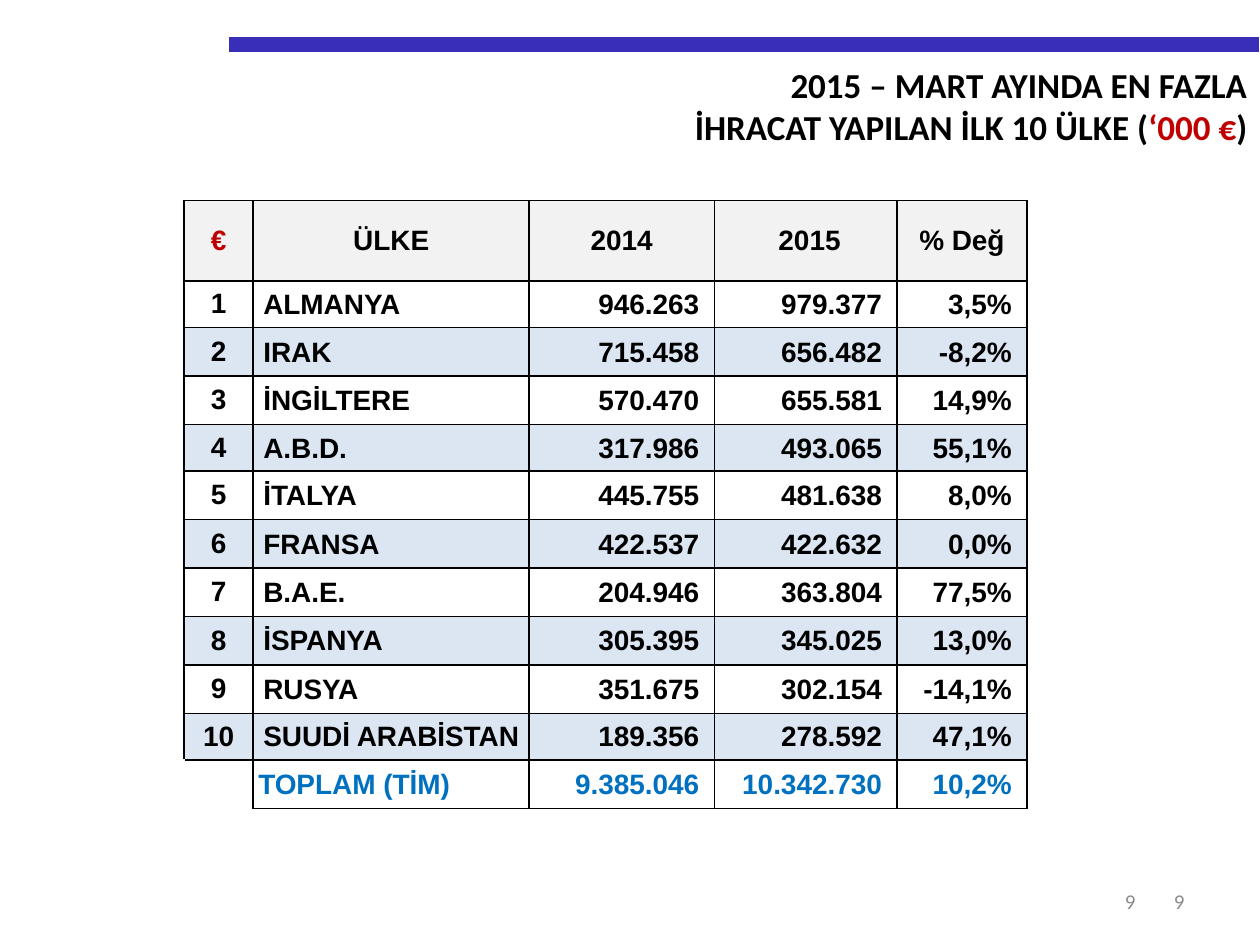
from dataclasses import dataclass

from lxml import etree
from pptx import Presentation
from pptx.dml.color import RGBColor
from pptx.enum.shapes import MSO_CONNECTOR
from pptx.enum.text import MSO_ANCHOR, MSO_AUTO_SIZE, PP_ALIGN
from pptx.oxml.ns import qn
from pptx.util import Inches, Pt

STRAIGHT = MSO_CONNECTOR.STRAIGHT
TOP, MIDDLE = MSO_ANCHOR.TOP, MSO_ANCHOR.MIDDLE
LEFT, CENTER, RIGHT = PP_ALIGN.LEFT, PP_ALIGN.CENTER, PP_ALIGN.RIGHT
NO_FIT = MSO_AUTO_SIZE.NONE

HEADERS = ["€", "ÜLKE", "2014", " 2015", "% Değ"]
COUNTRIES = [
    ("ALMANYA", "946.263", "979.377", "3,5%"),
    ("IRAK", "715.458", "656.482", "-8,2%"),
    ("İNGİLTERE", "570.470", "655.581", "14,9%"),
    ("A.B.D.", "317.986", "493.065", "55,1%"),
    ("İTALYA", "445.755", "481.638", "8,0%"),
    ("FRANSA", "422.537", "422.632", "0,0%"),
    ("B.A.E.", "204.946", "363.804", "77,5%"),
    ("İSPANYA", "305.395", "345.025", "13,0%"),
    ("RUSYA", "351.675", "302.154", "-14,1%"),
    ("SUUDİ ARABİSTAN", "189.356", "278.592", "47,1%"),
]
TOTAL = ["", "TOPLAM (TİM)", "9.385.046", "10.342.730", "10,2%"]
COLUMN_WIDTHS = [0.55, 2.19, 1.47, 1.45, 1.03]
TABLE_HEIGHT = 4.83
HEADER_HEIGHT = 0.64
SHORT_HEIGHT = 0.37
SHORT_ROWS = (1, 4, 10)


@dataclass
class Theme:
    """Colours, fonts and type sizes of the deck."""
    ink: str = "000000"
    accent: str = "C00000"
    total: str = "0070C0"
    bar: str = "382EB8"
    muted: str = "8C8C8C"
    header_fill: str = "F2F2F2"
    band_fill: str = "DCE6F2"
    heading_font: str = "Calibri"
    table_font: str = "Arial"
    title_size: int = 20
    table_size: int = 16
    number_size: int = 12


class SlideBuilder:
    """Draws styled elements on the current slide."""

    def __init__(self, slide, theme):
        self.slide = slide
        self.theme = theme

    def run(self, para, text, font, size, color, bold=True):
        span = para.add_run()
        span.text = text
        span.font.name = font
        span.font.size = Pt(size)
        span.font.bold = bold
        span.font.color.rgb = RGBColor.from_string(color)

    def title(self, lines, left, top, width, height):
        box = self.slide.shapes.title
        box.left, box.top = Inches(left), Inches(top)
        box.width, box.height = Inches(width), Inches(height)
        frame = box.text_frame
        frame.auto_size = NO_FIT
        frame.vertical_anchor = TOP
        for index, line in enumerate(lines):
            para = frame.add_paragraph() if index else frame.paragraphs[0]
            para.alignment = RIGHT
            for text, color in line:
                self.run(para, text, self.theme.heading_font, self.theme.title_size, color)

    def bar(self, left, right, top, weight):
        line = self.slide.shapes.add_connector(
            STRAIGHT, Inches(left), Inches(top), Inches(right), Inches(top))
        line.line.color.rgb = RGBColor.from_string(self.theme.bar)
        line.line.width = Pt(weight)
        etree.SubElement(line._element.spPr, qn("a:effectLst"))

    def page_number(self, text, left, top, width, height):
        box = self.slide.shapes.add_textbox(
            Inches(left), Inches(top), Inches(width), Inches(height))
        frame = box.text_frame
        frame.word_wrap = True
        frame.vertical_anchor = MIDDLE
        para = frame.paragraphs[0]
        para.alignment = RIGHT
        self.run(para, text, self.theme.heading_font, self.theme.number_size,
                 self.theme.muted, bold=False)

    def borders(self, cell, sides):
        properties = cell._tc.get_or_add_tcPr()
        for index, side in enumerate(sides):
            line = etree.Element(qn(f"a:ln{side}"), w=str(Pt(1)))
            fill = etree.SubElement(line, qn("a:solidFill"))
            etree.SubElement(fill, qn("a:srgbClr"), val=self.theme.ink)
            properties.insert(index, line)

    def cell(self, cell, text, color, fill, align, margins, sides="LRTB"):
        if fill:
            cell.fill.solid()
            cell.fill.fore_color.rgb = RGBColor.from_string(fill)
        else:
            cell.fill.background()
        self.borders(cell, sides)
        cell.vertical_anchor = MIDDLE
        (cell.margin_left, cell.margin_top,
         cell.margin_right, cell.margin_bottom) = [Inches(margin) for margin in margins]
        para = cell.text_frame.paragraphs[0]
        para.alignment = align
        para.font.size = Pt(self.theme.table_size)
        if text:
            self.run(para, text, self.theme.table_font, self.theme.table_size, color)

    def table(self, rows, left, top):
        theme = self.theme
        table = self.slide.shapes.add_table(
            len(rows), len(COLUMN_WIDTHS), Inches(left), Inches(top),
            Inches(sum(COLUMN_WIDTHS)), Inches(TABLE_HEIGHT)).table
        table.first_row = table.horz_banding = False
        for column, width in zip(table.columns, COLUMN_WIDTHS):
            column.width = Inches(width)
        regular_count = len(rows) - 1 - len(SHORT_ROWS)
        regular = (TABLE_HEIGHT - HEADER_HEIGHT - SHORT_HEIGHT * len(SHORT_ROWS)) / regular_count
        last = len(rows) - 1
        for r, values in enumerate(rows):
            height = HEADER_HEIGHT if r == 0 else SHORT_HEIGHT if r in SHORT_ROWS else regular
            table.rows[r].height = Inches(height)
            fill = theme.header_fill if r == 0 else theme.band_fill if r % 2 == 0 else None
            for c, text in enumerate(values):
                color = theme.total if r == last else theme.ink
                align, margins = RIGHT, (0.01, 0.01, 0.12, 0)
                if r == 0 or c == 0:
                    align, margins = CENTER, (0.1, 0.05, 0.1, 0.05)
                elif c == 1:
                    align, margins = LEFT, (0.04 if r == last else 0.08, 0.01, 0.01, 0)
                if r == c == 0:
                    color = theme.accent
                sides = "RT" if r == last and c == 0 else "LRTB"
                self.cell(table.cell(r, c), text, color, fill, align, margins, sides)


def main():
    theme = Theme()
    deck = Presentation()
    deck.slide_width, deck.slide_height = Inches(10), Inches(7.5)
    page = SlideBuilder(deck.slides.add_slide(deck.slide_layouts[5]), theme)
    page.bar(1.82, 9.99, 0.35, 8.5)
    for left, width in ((7.17, 2.33), (7.01, 2.1)):
        page.page_number("9", left, 6.95, width, 0.4)
    page.title([
        [("2015 – MART AYINDA EN FAZLA", theme.ink)],
        [("İHRACAT YAPILAN İLK 10 ÜLKE (", theme.ink),
         ("‘000 €", theme.accent), (")", theme.ink)],
    ], 1.06, 0.45, 8.94, 0.77)
    ranked = [(str(rank), *country) for rank, country in enumerate(COUNTRIES, 1)]
    page.table([HEADERS, *ranked, TOTAL], 1.46, 1.59)
    deck.save("out.pptx")


if __name__ == "__main__":
    main()
